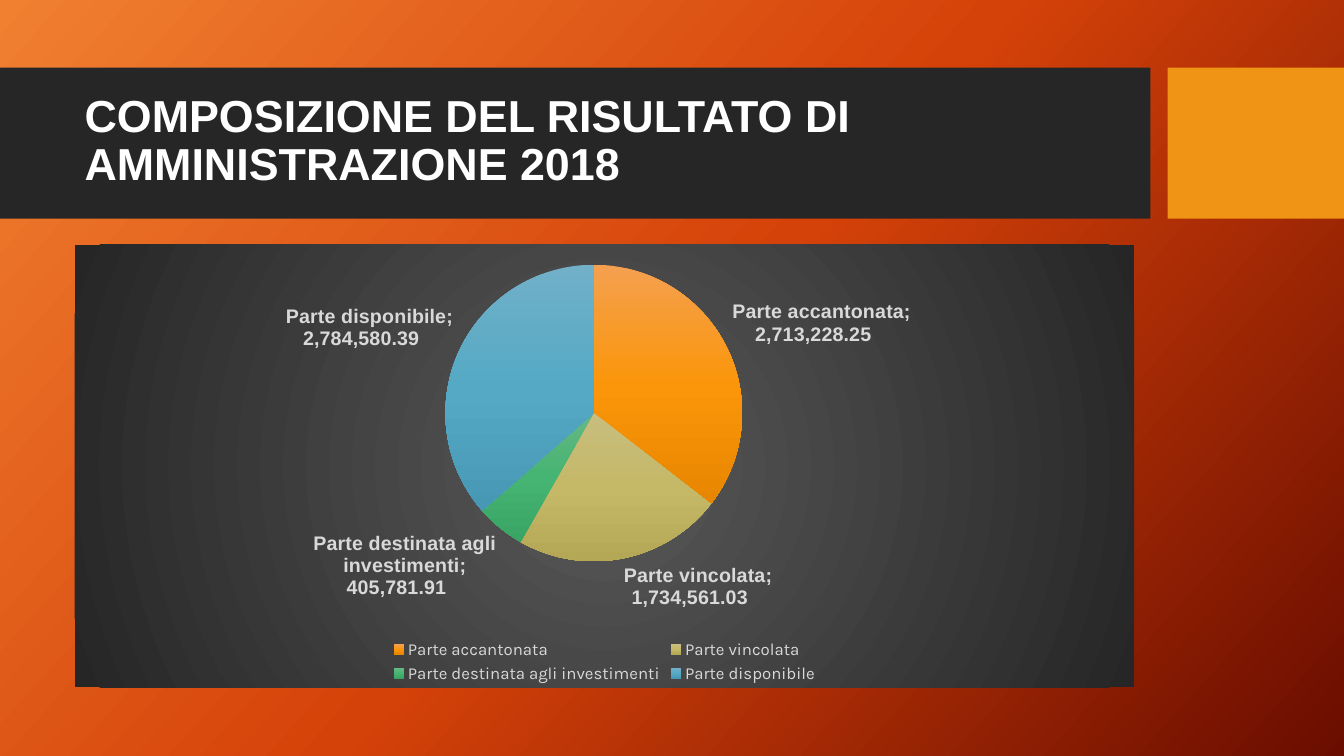
from pptx import Presentation
from pptx.chart.data import CategoryChartData
from pptx.dml.color import RGBColor
from pptx.dml.fill import FillFormat
from pptx.enum.chart import XL_CHART_TYPE as ChartType
from pptx.enum.chart import XL_LABEL_POSITION as LabelPosition
from pptx.enum.chart import XL_LEGEND_POSITION as LegendPosition
from pptx.enum.shapes import MSO_SHAPE as Preset
from pptx.enum.text import MSO_ANCHOR as Anchor
from pptx.oxml import parse_xml
from pptx.oxml.ns import nsdecls, qn
from pptx.oxml.xmlchemy import OxmlElement
from pptx.util import Inches, Pt

TITLE = "COMPOSIZIONE DEL RISULTATO DI AMMINISTRAZIONE 2018"
PARTS = [
    ("Parte accantonata", 2713228.25, ("F4A050", "FB960A", "E88600")),
    ("Parte vincolata", 1734561.03, ("C8BE7F", "C5B867", "B4A756")),
    ("Parte destinata agli investimenti", 405781.91, ("67B884", "46B472", "3AA464")),
    ("Parte disponibile", 2784580.39, ("71B0C8", "55A9C5", "4798B4")),
]
BACKDROP = ("F18031", "D54209", "6A0D00")
CHART_AREA = ("595959", "262626")
PIE_LAYOUT = {"x": 0.35, "y": 0.04, "w": 0.28, "h": 0.68}
CHARCOAL = RGBColor(0x26, 0x26, 0x26)
AMBER = RGBColor(0xF0, 0x94, 0x15)
WHITE = RGBColor(0xFF, 0xFF, 0xFF)
PALE_GREY = RGBColor(0xD9, 0xD9, 0xD9)
BANDS = [(0, 11.41, CHARCOAL), (11.58, 1.75, AMBER)]
BAND_TOP, BAND_HEIGHT = 0.67, 1.5
LEFT, WIDTH = Inches(0.74), Inches(10.51)

LINEAR = '<a:lin ang="{}" scaled="0"/>'
RADIAL = '<a:path path="circle"><a:fillToRect l="50000" t="50000" r="50000" b="50000"/></a:path>'


def set_gradient(fill, colours, direction):
    fill.gradient()
    blank = fill._xPr.find(qn("a:gradFill"))
    step = 100000 // (len(colours) - 1)
    stops = "".join(
        f'<a:gs pos="{index * step}"><a:srgbClr val="{colour}"/></a:gs>'
        for index, colour in enumerate(colours)
    )
    gradient = parse_xml(
        f'<a:gradFill {nsdecls("a")} rotWithShape="1">'
        f"<a:gsLst>{stops}</a:gsLst>{direction}</a:gradFill>"
    )
    blank.getparent().replace(blank, gradient)


def set_font(font, name, size, colour, bold=False):
    font.name, font.size, font.bold = name, Pt(size), bold
    font.color.rgb = colour


def add_bands(page):
    for left, width, colour in BANDS:
        band = page.shapes.add_shape(
            Preset.RECTANGLE, Inches(left), Inches(BAND_TOP), Inches(width), Inches(BAND_HEIGHT)
        )
        band.shadow.inherit = False
        band.fill.solid()
        band.fill.fore_color.rgb = colour
        band.line.fill.background()


def add_title(page):
    box = page.shapes.add_textbox(LEFT, Inches(0.82), WIDTH, Inches(1.18))
    frame = box.text_frame
    frame.word_wrap = True
    frame.vertical_anchor = Anchor.MIDDLE
    frame.text = TITLE
    para = frame.paragraphs[0]
    para.line_spacing = 0.9
    set_font(para.runs[0].font, "Arial", 32, WHITE, True)


def add_pie(page):
    data = CategoryChartData()
    data.categories = [name for name, _, _ in PARTS]
    data.add_series("Series 1", [value for _, value, _ in PARTS])
    chart = page.shapes.add_chart(
        ChartType.PIE, LEFT, Inches(2.43), WIDTH, Inches(4.39), data
    ).chart
    chart.has_title = False
    set_font(chart.font, "Karla", 10, WHITE)
    chart.has_legend = True
    chart.legend.position = LegendPosition.BOTTOM
    chart.legend.include_in_layout = False
    set_font(chart.legend.font, "Karla", 12, PALE_GREY)

    area = OxmlElement("c:spPr")
    chart._chartSpace.find(qn("c:chart")).addnext(area)
    area_fill = FillFormat.from_fill_parent(area)
    set_gradient(area_fill, CHART_AREA, RADIAL)

    plot = chart.plots[0]
    plot.vary_by_categories = True
    for index, (_, _, colours) in enumerate(PARTS):
        slice_format = plot.series[0].points[index].format
        set_gradient(slice_format.fill, colours, LINEAR.format(90 * 60000))
        slice_format.line.fill.background()

    plot.has_data_labels = True
    labels = plot.data_labels
    labels.show_value = labels.show_category_name = True
    labels.show_percentage = False
    labels.position = LabelPosition.OUTSIDE_END
    labels.number_format = "#,##0.00\\ _€"
    labels.number_format_is_linked = False
    set_font(labels.font, "Arial", 14, PALE_GREY, True)
    separator = OxmlElement("c:separator")
    separator.text = "; "
    labels._element.find(qn("c:showBubbleSize")).addnext(separator)

    sizes = "".join(f'<c:{key} val="{value}"/>' for key, value in PIE_LAYOUT.items())
    layout = parse_xml(
        f'<c:layout {nsdecls("c")}><c:manualLayout><c:layoutTarget val="inner"/>'
        f'<c:xMode val="edge"/><c:yMode val="edge"/>{sizes}</c:manualLayout></c:layout>'
    )
    plot_area = chart._chartSpace.find(".//" + qn("c:plotArea"))
    for former in plot_area.findall(qn("c:layout")):
        plot_area.remove(former)
    plot_area.insert(0, layout)


def main():
    deck = Presentation()
    deck.slide_width, deck.slide_height = Inches(13.33), Inches(7.5)
    page = deck.slides.add_slide(deck.slide_layouts[6])
    set_gradient(page.background.fill, BACKDROP, LINEAR.format(42 * 60000))
    add_bands(page)
    add_title(page)
    add_pie(page)
    deck.save("out.pptx")


if __name__ == "__main__":
    main()
